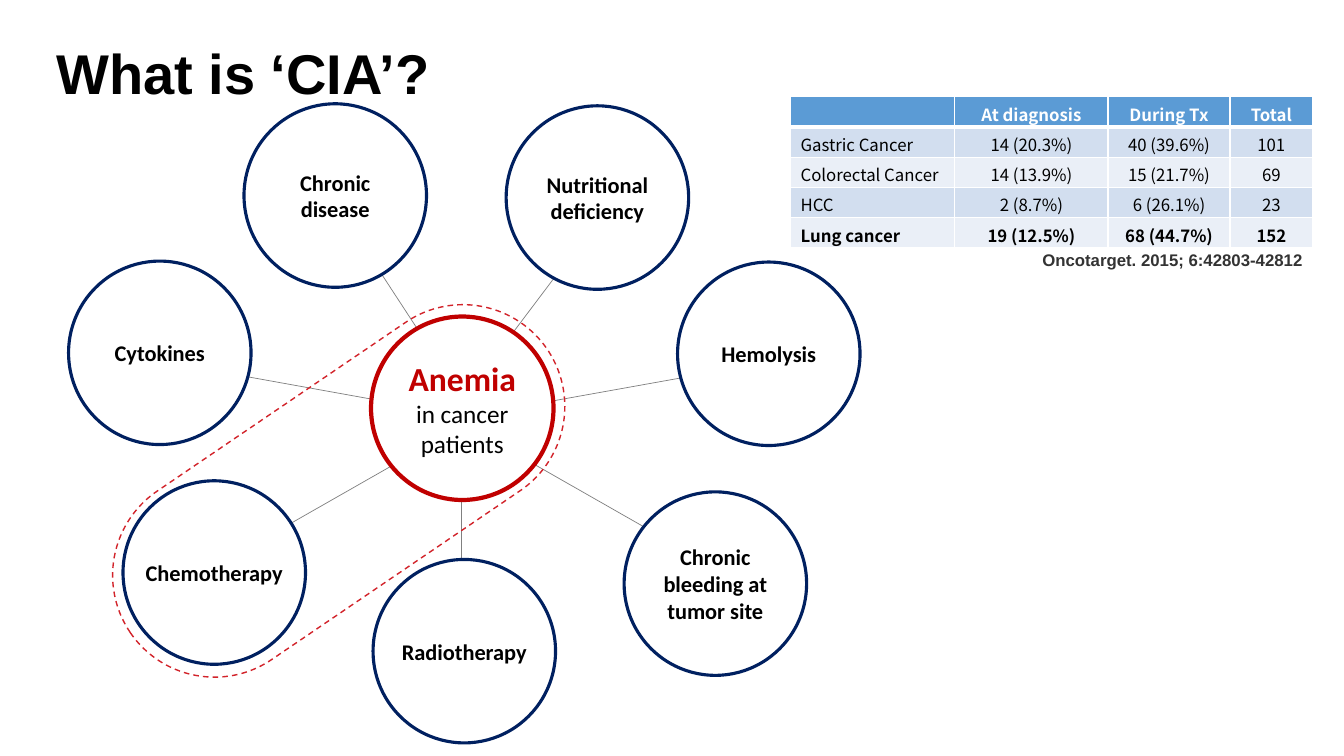
from dataclasses import dataclass

import pptx
import pptx.dml.color
import pptx.enum.dml
import pptx.enum.shapes
import pptx.enum.text
import pptx.oxml
import pptx.oxml.ns
import pptx.util
from pptx.util import Inches

ALIGN = pptx.enum.text.PP_ALIGN
SHAPES = pptx.enum.shapes.MSO_SHAPE


@dataclass(frozen=True)
class Theme:
    black: str = "000000"
    white: str = "FFFFFF"
    navy: str = "002060"
    red: str = "C00000"
    dash_red: str = "D2232A"
    spoke: str = "808080"
    citation: str = "333333"
    header: str = "5B9BD5"
    bands: tuple = ("D2DEEF", "EAEFF7")
    heading_font: str = "Arial"
    diagram_font: str = "Calibri"
    table_font: str = "Noto Sans CJK KR"
    title_size: int = 40
    hub_size: int = 24
    hub_detail_size: int = 18
    cause_size: int = 16
    small_size: int = 12


THEME = Theme()
CIRCLE_SIZE = (1.81, 1.82)

CAUSES = [
    ("Chronic\ndisease", (2.42, 1.03), (3.7, 2.59), (4.19, 3.34)),
    ("Nutritional deficiency", (5.02, 1.05), (5.6, 2.62), (5.02, 3.39)),
    ("Hemolysis", (6.72, 2.6), (6.92, 3.72), (5.3, 4.01)),
    ("Chronic bleeding at tumor site", (6.19, 4.88), (6.48, 5.28), (5.2, 4.55)),
    ("Cytokines", (0.68, 2.59), (2.3, 3.71), (3.91, 4)),
    ("Chemotherapy", (1.22, 4.77), (2.73, 5.28), (4.01, 4.55)),
    ("Radiotherapy", (3.7, 5.55), (4.58, 5.72), (4.58, 4.96)),
]

INCIDENCE = [
    ("", "At diagnosis", "During Tx", "Total"),
    ("Gastric Cancer", "14 (20.3%)", "40 (39.6%)", "101"),
    ("Colorectal Cancer", "14 (13.9%)", "15 (21.7%)", "69"),
    ("HCC", "2 (8.7%)", "6 (26.1%)", "23"),
    ("Lung cancer", "19 (12.5%)", "68 (44.7%)", "152"),
]


def rgb(value):
    """Return the colour for an RRGGBB string."""
    return pptx.dml.color.RGBColor.from_string(value)


def style(paragraph, size, color, font, bold=True, align=ALIGN.CENTER):
    """Set alignment and type for a whole paragraph."""
    paragraph.alignment = align
    paragraph.font.size = pptx.util.Pt(size)
    paragraph.font.name = font
    paragraph.font.bold = bold
    paragraph.font.color.rgb = rgb(color)


def outline(line, color, width):
    """Set the colour and width of a line."""
    line.color.rgb = rgb(color)
    line.width = pptx.util.Pt(width)


def add_heading(slide, box, text, size, color, align, indent=0.1):
    """Add a one-line bold text box."""
    heading = slide.shapes.add_textbox(*map(Inches, box))
    frame = heading.text_frame
    frame.word_wrap = True
    frame.margin_left = Inches(indent)
    frame.text = text
    style(frame.paragraphs[0], size, color, THEME.heading_font, align=align)


def add_spoke(slide, start, end):
    """Join a cause to the hub with a thin line."""
    spoke = slide.shapes.add_connector(
        pptx.enum.shapes.MSO_CONNECTOR.STRAIGHT, *map(Inches, start + end))
    outline(spoke.line, THEME.spoke, 0.5)
    properties = spoke._element.spPr
    properties.append(pptx.oxml.parse_xml(
        f"<a:effectLst {pptx.oxml.ns.nsdecls('a')}/>"))


def add_circle(slide, corner, text, color, width):
    """Add a white circle with centred text and return its paragraphs."""
    circle = slide.shapes.add_shape(
        SHAPES.OVAL, *map(Inches, corner + CIRCLE_SIZE))
    circle.shadow.inherit = False
    circle.fill.solid()
    circle.fill.fore_color.rgb = rgb(THEME.white)
    outline(circle.line, color, width)
    frame = circle.text_frame
    frame.margin_left = frame.margin_right = 0
    frame.margin_top = frame.margin_bottom = 0
    frame.vertical_anchor = pptx.enum.text.MSO_ANCHOR.MIDDLE
    frame.word_wrap = " " in text
    frame.text = text
    for paragraph in frame.paragraphs:
        style(paragraph, THEME.cause_size, THEME.black, THEME.diagram_font)
    return frame.paragraphs


def add_hub(slide):
    """Add the central red circle."""
    name, *details = add_circle(
        slide, (3.68, 3.14), "Anemia\nin cancer\npatients", THEME.red, 3)
    style(name, THEME.hub_size, THEME.red, THEME.diagram_font)
    for detail in details:
        style(detail, THEME.hub_detail_size, THEME.black, THEME.diagram_font, bold=False)


def add_highlight(slide):
    """Ring the hub and chemotherapy with a dashed capsule."""
    capsule = slide.shapes.add_shape(
        SHAPES.ROUNDED_RECTANGLE, *map(Inches, (0.86, 3.86, 5, 2.02)))
    capsule.shadow.inherit = False
    capsule.adjustments[0] = 0.5
    capsule.rotation = 325.8
    capsule.fill.background()
    outline(capsule.line, THEME.dash_red, 1)
    capsule.line.dash_style = pptx.enum.dml.MSO_LINE.DASH


def set_borders(cell, bottom):
    """Draw white borders round a cell, with the given bottom width."""
    properties = cell._tc.get_or_add_tcPr()
    for side, width in {"L": 1, "R": 1, "T": 1, "B": bottom}.items():
        properties.append(pptx.oxml.parse_xml(
            f'<a:ln{side} {pptx.oxml.ns.nsdecls("a")} w="{pptx.util.Pt(width)}">'
            f'<a:solidFill><a:srgbClr val="{THEME.white}"/></a:solidFill></a:ln{side}>'))


def fill_cell(cell, text, row, column):
    """Write and format one cell of the incidence table."""
    is_header = row == 0
    set_borders(cell, 3 if is_header else 1)
    cell.fill.solid()
    cell.fill.fore_color.rgb = rgb(
        THEME.header if is_header else THEME.bands[(row - 1) % 2])
    cell.margin_top, cell.margin_bottom = Inches(0.05), Inches(0)
    cell.text = text
    paragraph = cell.text_frame.paragraphs[0]
    style(paragraph, THEME.small_size, THEME.white if is_header else THEME.black,
          THEME.table_font, bold=row in (0, len(INCIDENCE) - 1),
          align=ALIGN.CENTER if column else ALIGN.LEFT)
    if not text:
        paragraph._p.append(pptx.oxml.parse_xml(
            f'<a:endParaRPr {pptx.oxml.ns.nsdecls("a")} sz="{THEME.small_size * 100}"/>'))


def add_incidence_table(slide):
    """Add the table of anemia incidence by cancer."""
    table = slide.shapes.add_table(
        len(INCIDENCE), len(INCIDENCE[0]), *map(Inches, (7.84, 0.96, 5.18, 1.5))).table
    for column, width in zip(table.columns, (1.63, 1.52, 1.21, 0.82)):
        column.width = Inches(width)
    for row, values in enumerate(INCIDENCE):
        for column, text in enumerate(values):
            fill_cell(table.cell(row, column), text, row, column)


def main():
    """Build the slide and save it."""
    deck = pptx.Presentation()
    deck.slide_width, deck.slide_height = Inches(13.33), Inches(7.5)
    slide = deck.slides.add_slide(deck.slide_layouts[6])
    for _, _, start, end in CAUSES:
        add_spoke(slide, start, end)
    add_hub(slide)
    for label, corner, _, _ in CAUSES:
        add_circle(slide, corner, label, THEME.navy, 2.25)
    add_highlight(slide)
    add_heading(slide, (0.31, 0.33, 5.4, 0.77), "What is ‘CIA’?",
                THEME.title_size, THEME.black, ALIGN.LEFT, indent=0.25)
    add_incidence_table(slide)
    add_heading(slide, (10.14, 2.43, 2.88, 0.3), "Oncotarget. 2015; 6:42803-42812",
                THEME.small_size, THEME.citation, ALIGN.RIGHT)
    deck.save("out.pptx")


if __name__ == "__main__":
    main()
